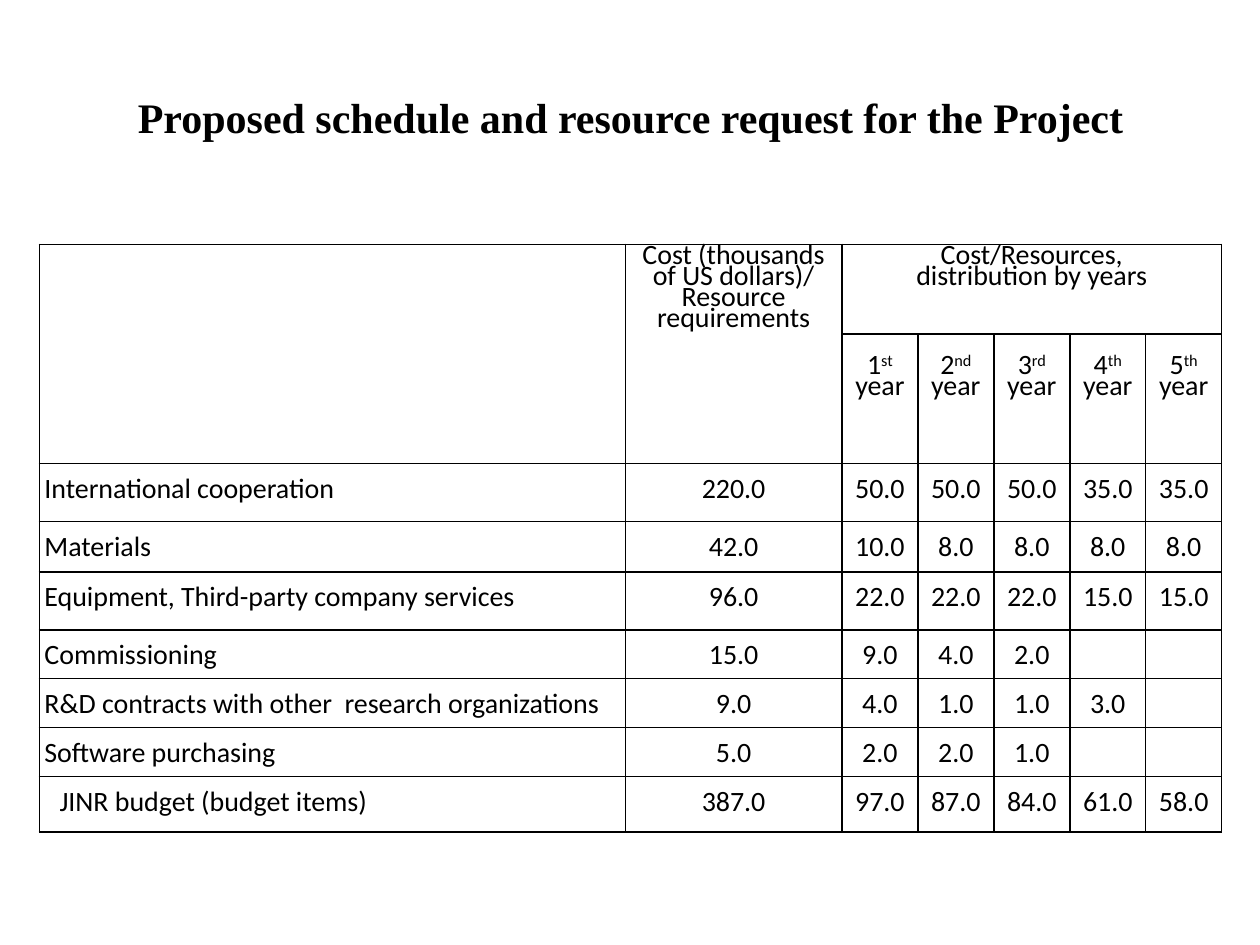
from dataclasses import dataclass
from typing import Any

from lxml import etree
from pptx import Presentation
from pptx.dml.color import RGBColor
from pptx.enum.text import MSO_ANCHOR, PP_ALIGN
from pptx.oxml.ns import qn
from pptx.util import Pt

LEFT, CENTER = PP_ALIGN.LEFT, PP_ALIGN.CENTER
TOP = MSO_ANCHOR.TOP
COLORS = {"ink": "000000", "paper": "FFFFFF"}
INK = RGBColor.from_string(COLORS["ink"])

HEADER_FORMAT = {"alignment": CENTER, "line_spacing": Pt(12)}
TITLE_FORMAT = {**HEADER_FORMAT, "space_after": Pt(8)}
LABEL_FORMAT = {"alignment": LEFT, "line_spacing": 1.05, "space_after": Pt(8)}
VALUE_FORMAT = {**LABEL_FORMAT, "alignment": CENTER}
TITLE_FONT = {"name": "Times New Roman", "size": Pt(24), "bold": True}
TABLE_FONT = {"name": "Calibri", "size": Pt(16)}

COLUMN_WIDTHS = [334.8, 123.8] + [43.4] * 5
HEADER_HEIGHTS = [51.1, 74.2]
SIDE_INSET, END_INSET = 2.9, 3.6
TOTAL_INDENT = 8.64


@dataclass
class BudgetItem:
    label: str
    height: float
    total: str
    years: list[str]
    indent: float = 0


ORDINALS = ["st", "nd", "rd", "th", "th"]
ITEMS = [
    BudgetItem("International cooperation", 33.1, "220.0",
               ["50.0", "50.0", "50.0", "35.0", "35.0"]),
    BudgetItem("Materials", 28.8, "42.0", ["10.0", "8.0", "8.0", "8.0", "8.0"]),
    BudgetItem("Equipment, Third-party company services", 33.1, "96.0",
               ["22.0", "22.0", "22.0", "15.0", "15.0"]),
    BudgetItem("Commissioning", 25.9, "15.0", ["9.0", "4.0", "2.0", "", ""]),
    BudgetItem("R&D contracts with other  research organizations", 28.1, "9.0",
               ["4.0", "1.0", "1.0", "3.0", ""]),
    BudgetItem("Software purchasing", 28.1, "5.0", ["2.0", "2.0", "1.0", "", ""]),
    BudgetItem("JINR budget (budget items)", 31.7, "387.0",
               ["97.0", "87.0", "84.0", "61.0", "58.0"], TOTAL_INDENT),
]


def apply_format(target: Any, values: dict[str, Any]) -> None:
    for name, value in values.items():
        setattr(target, name, value)


def add_span(para: Any, text: str, font: dict[str, Any], raised: bool = False) -> None:
    span = para.add_run()
    span.text = text
    apply_format(span.font, font)
    span.font.color.rgb = INK
    if raised:
        span.font._element.set("baseline", "30000")


def write_lines(cell: Any, lines: list[str], values: dict[str, Any]) -> None:
    for index, line in enumerate(lines):
        para = cell.text_frame.paragraphs[0] if index == 0 else cell.text_frame.add_paragraph()
        apply_format(para, values)
        add_span(para, line, TABLE_FONT)


def style_cell(cell: Any) -> None:
    empty = not cell.text
    side, end = (0, 0) if empty else (SIDE_INSET, END_INSET)
    apply_format(cell, {"margin_left": Pt(side), "margin_right": Pt(side),
                        "margin_top": Pt(end), "margin_bottom": Pt(end),
                        "vertical_anchor": TOP})
    properties = cell._tc.get_or_add_tcPr()
    for edge in ("a:lnL", "a:lnR", "a:lnT", "a:lnB"):
        line = etree.SubElement(properties, qn(edge), w=str(Pt(0.96)))
        fill = etree.SubElement(line, qn("a:solidFill"))
        etree.SubElement(fill, qn("a:srgbClr"), val=COLORS["ink"])
    cell.fill.solid()
    cell.fill.fore_color.rgb = RGBColor.from_string(COLORS["paper"])


def add_title(page: Any) -> None:
    title = page.shapes.title
    apply_format(title, {"left": Pt(59.8), "top": Pt(65.5),
                         "width": Pt(601.2), "height": Pt(18.7)})
    apply_format(title.text_frame, {"vertical_anchor": TOP, "word_wrap": True})
    para = title.text_frame.paragraphs[0]
    apply_format(para, TITLE_FORMAT)
    add_span(para, "Proposed schedule and resource request for the Project", TITLE_FONT)


def write_header(table: Any) -> None:
    table.cell(0, 0).merge(table.cell(1, 0))
    table.cell(0, 1).merge(table.cell(1, 1))
    table.cell(0, 2).merge(table.cell(0, 6))
    write_lines(table.cell(0, 1),
                ["Cost (thousands", "of US dollars)/ Resource requirements"], HEADER_FORMAT)
    write_lines(table.cell(0, 2),
                ["Cost/Resources,", "distribution by years"], HEADER_FORMAT)
    for year, ordinal in enumerate(ORDINALS, start=1):
        para = table.cell(1, year + 1).text_frame.paragraphs[0]
        apply_format(para, HEADER_FORMAT)
        add_span(para, str(year), TABLE_FONT)
        add_span(para, ordinal, TABLE_FONT, raised=True)
        add_span(para, " year", TABLE_FONT)


def write_item(table: Any, row: int, item: BudgetItem) -> None:
    label_cell = table.cell(row, 0)
    write_lines(label_cell, [item.label], LABEL_FORMAT)
    if item.indent:
        properties = label_cell.text_frame.paragraphs[0]._p.get_or_add_pPr()
        properties.set("marL", str(Pt(item.indent)))
    for column, value in enumerate([item.total, *item.years], start=1):
        if value:
            write_lines(table.cell(row, column), [value], VALUE_FORMAT)


def add_budget_table(page: Any) -> None:
    heights = HEADER_HEIGHTS + [item.height for item in ITEMS]
    table = page.shapes.add_table(len(heights), len(COLUMN_WIDTHS), Pt(22.5), Pt(139.7),
                                  Pt(sum(COLUMN_WIDTHS)), Pt(sum(heights))).table
    apply_format(table, {"first_row": False, "horz_banding": False})
    for column, width in zip(table.columns, COLUMN_WIDTHS):
        column.width = Pt(width)
    for row, height in zip(table.rows, heights):
        row.height = Pt(height)
    write_header(table)
    for row, item in enumerate(ITEMS, start=len(HEADER_HEIGHTS)):
        write_item(table, row, item)
    for cell in table.iter_cells():
        style_cell(cell)
    for column in range(2, len(COLUMN_WIDTHS)):
        table.cell(1, column).margin_top = Pt(END_INSET + 12)


def main() -> None:
    deck = Presentation()
    apply_format(deck, {"slide_width": Pt(720), "slide_height": Pt(540)})
    page = deck.slides.add_slide(deck.slide_layouts[5])
    add_title(page)
    add_budget_table(page)
    deck.save("out.pptx")


if __name__ == "__main__":
    main()
